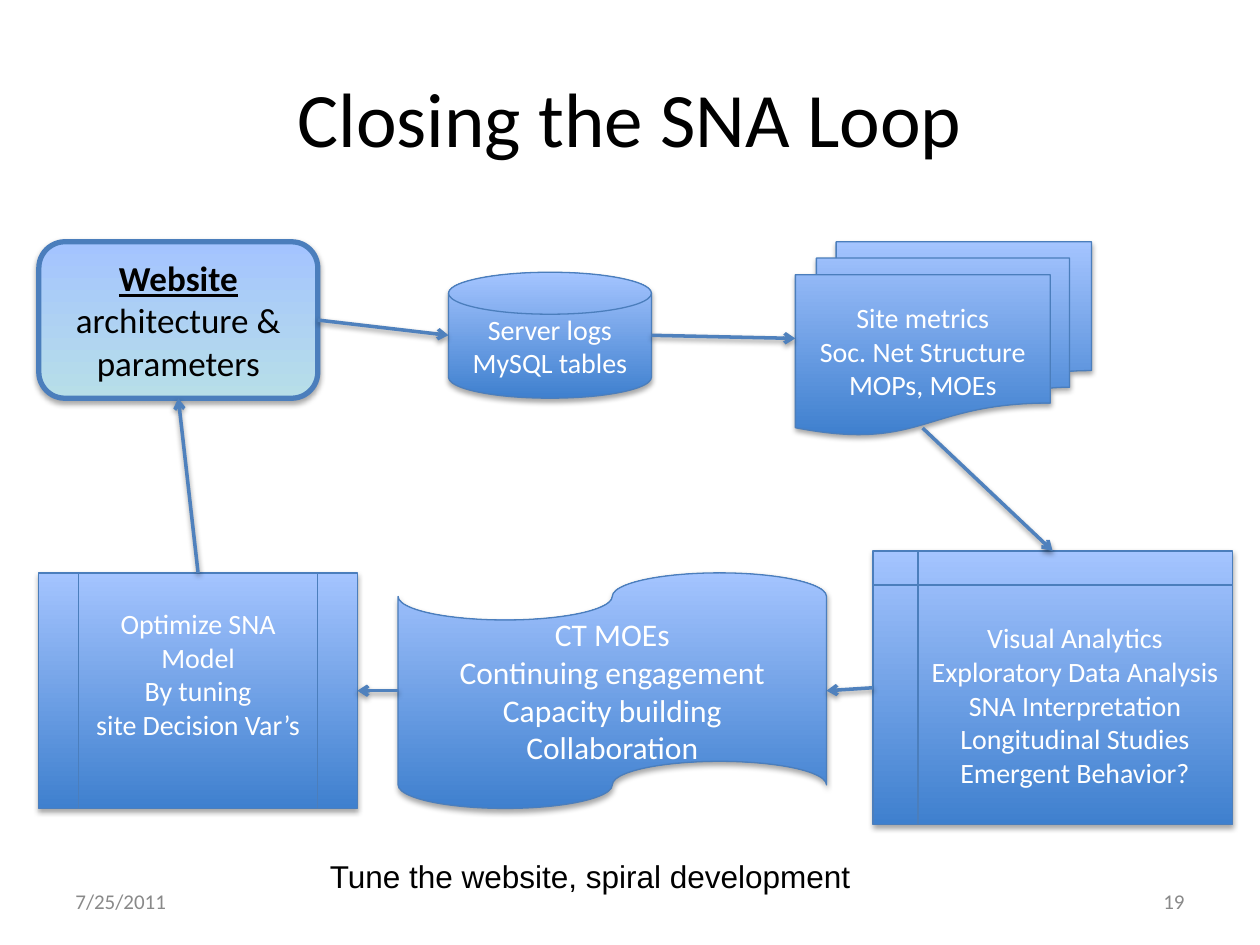
import lxml.etree
import pptx
import pptx.dml.color
import pptx.enum.shapes
import pptx.enum.text
import pptx.oxml.ns
import pptx.util

Pt = pptx.util.Pt
qn = pptx.oxml.ns.qn
Align = pptx.enum.text.PP_ALIGN
Anchor = pptx.enum.text.MSO_ANCHOR
Shape = pptx.enum.shapes.MSO_SHAPE
TOP, LEFT, BOTTOM, RIGHT = range(4)


def color(value):
    return pptx.dml.color.RGBColor.from_string(value)


def write(frame, text, font="Calibri", size=16, fill="FFFFFF",
          align=Align.CENTER, anchor=Anchor.MIDDLE, lead=""):
    frame.word_wrap = True
    frame.vertical_anchor = anchor
    for index, line in enumerate(text.split("\n")):
        para = frame.paragraphs[0] if index == 0 else frame.add_paragraph()
        para.alignment = align
        pieces = [(lead, True)] if lead and index == 0 else []
        for words, strong in pieces + [(line, False)]:
            span = para.add_run()
            span.text = words
            span.font.name = font
            span.font.size = Pt(size)
            span.font.color.rgb = color(fill)
            span.font.bold = strong
            span.font.underline = strong


class Diagram:
    dark, light, edge, arrow_color = "3F80CE", "A4C4FF", "4B7EBC", "4F81BD"

    def __init__(self, deck):
        self.page = deck.slides.add_slide(deck.slide_layouts[6])

    def shadow(self, item, opacity, distance):
        properties = item._element.spPr
        effects = properties.find(qn("a:effectLst"))
        if effects is None:
            effects = lxml.etree.SubElement(properties, qn("a:effectLst"))
        outer = lxml.etree.SubElement(
            effects, qn("a:outerShdw"), blurRad=str(Pt(3.1)),
            dist=str(Pt(distance)), dir="5400000", rotWithShape="0")
        tint = lxml.etree.SubElement(outer, qn("a:srgbClr"), val="000000")
        lxml.etree.SubElement(tint, qn("a:alpha"), val=str(opacity * 1000))

    def text(self, place, text, **style):
        box = self.page.shapes.add_textbox(*map(Pt, place))
        write(box.text_frame, text, **style)

    def node(self, kind, place, text, base=dark, line=0.75, **style):
        box = self.page.shapes.add_shape(kind, *map(Pt, place))
        box.fill.gradient()
        box.fill.gradient_angle = 90
        for stop, value in zip(box.fill.gradient_stops, (base, self.light)):
            stop.color.rgb = color(value)
        box.line.color.rgb = color(self.edge)
        box.line.width = Pt(line)
        box.shadow.inherit = False
        self.shadow(box, 35, 1.8)
        write(box.text_frame, text, **style)
        return box

    def arrow(self, start, end):
        points = [self.side(*start), self.side(*end)]
        link = self.page.shapes.add_connector(
            pptx.enum.shapes.MSO_CONNECTOR.STRAIGHT, *points[0], *points[1])
        for (box, site), connect in ((start, link.begin_connect),
                                     (end, link.end_connect)):
            if self.joins(box, site):
                connect(box, site)
        link.line.color.rgb = color(self.arrow_color)
        link.line.width = Pt(2)
        stroke = link._element.spPr.find(qn("a:ln"))
        lxml.etree.SubElement(stroke, qn("a:tailEnd"), type="arrow")
        self.shadow(link, 38, 1.6)

    def joins(self, box, site):
        kind = box.auto_shape_type
        stacked = kind == Shape.FLOWCHART_MULTIDOCUMENT and site == BOTTOM
        return kind != Shape.FLOWCHART_MAGNETIC_DISK and not stacked

    def side(self, box, site):
        if box.auto_shape_type == Shape.FLOWCHART_MULTIDOCUMENT and site == BOTTOM:
            return Pt(527.2), Pt(244.6)
        across, down = {TOP: (1, 0), LEFT: (0, 1), BOTTOM: (1, 2), RIGHT: (2, 1)}[site]
        return box.left + box.width * across // 2, box.top + box.height * down // 2


def main():
    deck = pptx.Presentation()
    deck.slide_width, deck.slide_height = Pt(720), Pt(540)
    diagram = Diagram(deck)

    diagram.text((36, 21.6, 648, 90), "Closing the SNA Loop", size=44, fill="000000")
    for left, text, align in ((36, "7/25/2011", Align.LEFT), (516, "19", Align.RIGHT)):
        diagram.text((left, 500.6, 168, 28.8), text, size=12, fill="898989", align=align)

    website = diagram.node(
        Shape.ROUNDED_RECTANGLE, (22.2, 138.2, 159.4, 89.4),
        " architecture & parameters", base="B7DEE8", line=3,
        size=20, fill="000000", lead="Website")
    logs = diagram.node(
        Shape.FLOWCHART_MAGNETIC_DISK, (256.3, 155.6, 116, 72),
        "Server logs\nMySQL tables")
    metrics = diagram.node(
        Shape.FLOWCHART_MULTIDOCUMENT, (454.5, 138.2, 169.2, 110.4),
        "Site metrics\nSoc. Net Structure\nMOPs, MOEs")
    analytics = diagram.node(
        Shape.FLOWCHART_INTERNAL_STORAGE, (498.9, 314.8, 205.2, 156.4),
        "Visual Analytics\nExploratory Data Analysis\nSNA Interpretation\n"
        "Longitudinal Studies\nEmergent Behavior?")
    outcomes = diagram.node(
        Shape.FLOWCHART_PUNCHED_TAPE, (227.5, 327.4, 244.8, 134.6),
        "CT MOEs\nContinuing engagement\nCapacity building\nCollaboration", size=18)
    model = diagram.node(
        Shape.FLOWCHART_PREDEFINED_PROCESS, (22.2, 327.4, 182, 134.6),
        "Optimize SNA Model\nBy tuning\nsite Decision Var’s")
    model.text_frame.margin_bottom = Pt(23)

    for start, end in (
        ((website, RIGHT), (logs, LEFT)),
        ((model, TOP), (website, BOTTOM)),
        ((analytics, LEFT), (outcomes, RIGHT)),
        ((metrics, BOTTOM), (analytics, TOP)),
        ((logs, RIGHT), (metrics, LEFT)),
        ((outcomes, LEFT), (model, RIGHT)),
    ):
        diagram.arrow(start, end)

    diagram.text((181.4, 486, 334.8, 28.8), "Tune the website, spiral development",
                 font="Arial", size=18, fill="000000", align=Align.LEFT, anchor=Anchor.TOP)
    deck.save("out.pptx")


if __name__ == "__main__":
    main()
